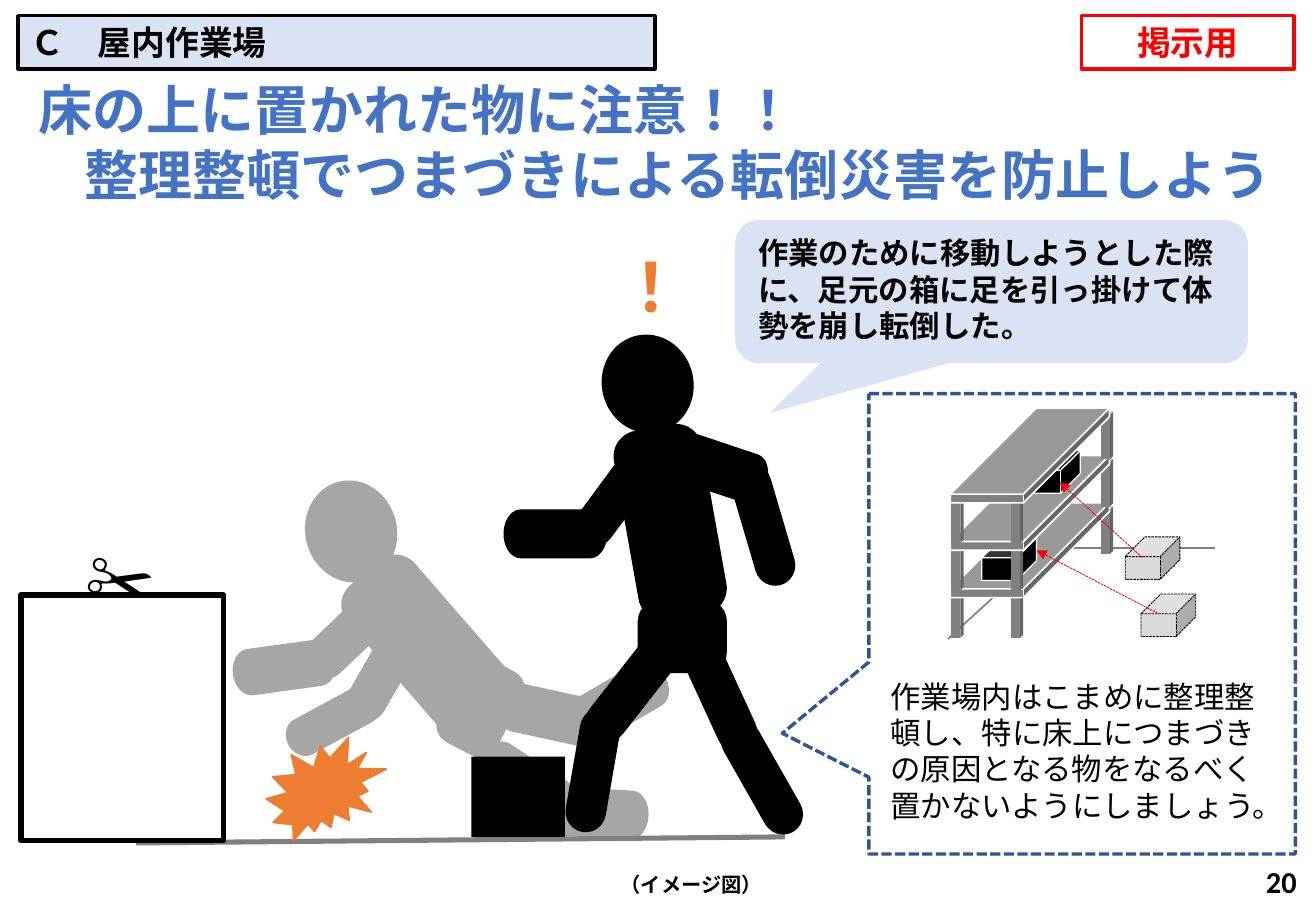
from dataclasses import dataclass

from lxml.etree import SubElement
from pptx import Presentation
from pptx.dml.color import RGBColor
from pptx.enum.dml import MSO_LINE
from pptx.enum.shapes import MSO_CONNECTOR, MSO_SHAPE
from pptx.enum.text import MSO_ANCHOR, MSO_AUTO_SIZE, PP_ALIGN
from pptx.oxml.ns import qn
from pptx.util import Inches, Pt


@dataclass(frozen=True)
class Theme:
    black: str = "000000"
    white: str = "FFFFFF"
    gray: str = "808080"
    ghost: str = "A6A6A6"
    carton: str = "D9D9D9"
    pale: str = "DAE3F3"
    blue: str = "4472C4"
    navy: str = "2F5597"
    red: str = "FF0000"
    orange: str = "ED7D31"
    latin: str = "Calibri"
    japanese: str = "Noto Sans CJK JP"
    headline: int = 32
    mark: int = 40
    label: int = 20
    body: int = 18
    note: int = 12


THEME = Theme()


def assign(target, formats):
    for attribute, value in formats.items():
        setattr(target, attribute, value)


def place(origin, box):
    x, y, width, height = box
    return [Inches(n) for n in (origin[0] + x, origin[1] + y, width, height)]


def style_line(line, color, width, dashed=False):
    line.color.rgb = RGBColor.from_string(color)
    line.width = Pt(width)
    if dashed:
        line.dash_style = MSO_LINE.SQUARE_DOT


def draw(slide, kind, origin, box, fill=None, line=None, adjust=(), rotation=0):
    part = slide.shapes.add_shape(kind, *place(origin, box))
    part.shadow.inherit = False
    part.rotation = rotation
    for index, value in enumerate(adjust):
        part.adjustments[index] = value
    if fill:
        part.fill.solid()
        part.fill.fore_color.rgb = RGBColor.from_string(fill)
    else:
        part.fill.background()
    if line:
        style_line(part.line, *line)
    else:
        part.line.fill.background()
    return part


def connect(slide, origin, ends, line, arrow=False):
    x1, y1, x2, y2 = ends
    points = origin[0] + x1, origin[1] + y1, origin[0] + x2, origin[1] + y2
    link = slide.shapes.add_connector(MSO_CONNECTOR.STRAIGHT, *map(Inches, points))
    style_line(link.line, *line)
    if arrow:
        SubElement(link.line._get_or_add_ln(), qn("a:tailEnd"), type="triangle")
    SubElement(link._element.spPr, qn("a:effectLst"))


def write(holder, text, size, color=THEME.black, bold=True, aligns=(PP_ALIGN.LEFT,),
          anchor=MSO_ANCHOR.TOP, latin=THEME.latin):
    frame = holder.text_frame
    frame.text = text
    assign(frame, {"word_wrap": True, "auto_size": MSO_AUTO_SIZE.NONE,
                   "vertical_anchor": anchor})
    for paragraph, align in zip(frame.paragraphs, aligns):
        paragraph.alignment = align
        for run in paragraph.runs:
            assign(run.font, {"name": latin, "size": Pt(size), "bold": bold})
            run.font.color.rgb = RGBColor.from_string(color)
            properties = run.font._element
            properties.set("lang", "ja-JP")
            SubElement(properties, qn("a:ea"), typeface=THEME.japanese)


def caption(slide, origin, box, text, size, rotation=0, **formats):
    words = slide.shapes.add_textbox(*place(origin, box))
    words.rotation = rotation
    write(words, text, size, **formats)


def heading(slide, origin):
    headline = slide.shapes.title
    assign(headline, dict(zip(("left", "top", "width", "height"),
                              place(origin, (0.07, 0.45, 10.35, 1.18)))))
    write(headline, "床の上に置かれた物に注意！！\n整理整頓でつまづきによる転倒災害を防止しよう",
          THEME.headline, THEME.blue, aligns=(PP_ALIGN.LEFT, PP_ALIGN.RIGHT))
    workplace = draw(slide, MSO_SHAPE.RECTANGLE, origin, (0, 0, 5.24, 0.44),
                     THEME.pale, (THEME.black, 2))
    write(workplace, "Ｃ　屋内作業場", THEME.label, anchor=MSO_ANCHOR.MIDDLE)
    posting = draw(slide, MSO_SHAPE.RECTANGLE, origin, (8.75, 0, 1.75, 0.44),
                   line=(THEME.red, 2))
    write(posting, "掲示用", THEME.label, THEME.red, aligns=(PP_ALIGN.CENTER,),
          anchor=MSO_ANCHOR.MIDDLE)


def accident(slide, origin):
    draw(slide, MSO_SHAPE.ROUNDED_RECTANGULAR_CALLOUT, origin, (0, 0, 4.22, 1.18),
         THEME.pale, adjust=(-0.432, 0.847, 0.167))
    caption(slide, origin, (0.09, 0.07, 4.01, 1.01),
            "作業のために移動しようとした際に、足元の箱に足を引っ掛けて体勢を崩し転倒した。",
            THEME.body)


def worker(slide, origin, color, head, torso, limbs):
    groups = ((MSO_SHAPE.OVAL, (), head), (MSO_SHAPE.ROUNDED_RECTANGLE, (0.287,), torso),
              (MSO_SHAPE.FLOWCHART_TERMINATOR, (), limbs))
    for kind, adjust, members in groups:
        for *box, rotation in members:
            draw(slide, kind, origin, box, color, (color, 1), adjust, rotation)


def fallen_worker(slide, origin):
    worker(slide, origin, THEME.ghost,
           head=[(0.52, 0.96, 0.74, 0.83, 346.4)],
           torso=[(0.73, 1.96, 1.58, 0.72, 229), (1.69, 2.44, 0.53, 0.76, 207.5)],
           limbs=[(2.68, 2.58, 0.84, 0.39, 330.1), (2.49, 3.5, 0.84, 0.39, 183.1),
                  (1.9, 3.25, 0.84, 0.39, 213.2), (2.11, 2.69, 0.84, 0.39, 192.2),
                  (-0.08, 2.31, 0.84, 0.37, 172.2), (0.33, 2.78, 0.82, 0.31, 151.6),
                  (0.46, 2.06, 0.82, 0.34, 316.5), (0.68, 2.31, 1.02, 0.32, 299.9)])


def walking_worker(slide, origin):
    worker(slide, origin, THEME.black,
           head=[(0.96, 0.76, 0.74, 0.8, 346.4)],
           torso=[(0.73, 1.94, 1.57, 0.72, 259.9), (1.32, 2.88, 0.59, 0.72, 270)],
           limbs=[(1.77, 2.16, 1.02, 0.32, 253.6), (0.15, 2.2, 0.84, 0.39, 180),
                  (0.59, 1.89, 1.02, 0.32, 126.4), (1.76, 4.24, 1.02, 0.32, 240.4),
                  (1.41, 3.55, 1.02, 0.32, 245.3), (0.7, 3.51, 0.99, 0.33, 128),
                  (1.5, 1.65, 0.82, 0.4, 198.5), (0.37, 4.18, 1.02, 0.32, 279.8)])
    caption(slide, origin, (0.64, -0.03, 1.44, 0.77), "！", THEME.mark, color=THEME.orange,
            aligns=(PP_ALIGN.CENTER,), latin=THEME.japanese)


def floor_objects(slide, origin):
    draw(slide, MSO_SHAPE.RECTANGLE, origin, (0.17, 0.9, 1.67, 2.02), THEME.white,
         (THEME.black, 3.5))
    draw(slide, MSO_SHAPE.RECTANGLE, origin, (3.88, 2.23, 0.77, 0.66), THEME.black)
    draw(slide, MSO_SHAPE.EXPLOSION2, origin, (2.19, 2.07, 0.99, 0.85), THEME.orange,
         (THEME.orange, 1))
    caption(slide, origin, (0.04, 0.37, 1.92, 0.77), "✂", THEME.mark, rotation=12.9,
            aligns=(PP_ALIGN.CENTER,))


def storage_rack(slide, origin):
    for ends in ((0.78, 1.16, 2.19, 1.16), (-0.01, 1.91, 0.8, 1.17), (0.79, 1.14, 0.8, 0.14)):
        connect(slide, origin, ends, (THEME.gray, 1))
    stored = ((0.27, 1.08), (0.63, 0.36), None)
    for level, box in enumerate(stored):
        rise = 0.39 * level
        for x, y in ((0.02, 1.51), (0.51, 1.51), (1.25, 0.82)):
            draw(slide, MSO_SHAPE.CUBE, origin, (x, y - rise, 0.1, 0.39), THEME.gray)
        draw(slide, MSO_SHAPE.CUBE, origin, (0.01, 0.79 - rise, 1.31, 0.78),
             THEME.gray, (THEME.white, 1), (0.908,))
        if box:
            draw(slide, MSO_SHAPE.CUBE, origin, (*box, 0.45, 0.35), THEME.black,
                 (THEME.white, 0.75), (0.464,))
    for x, y in ((1.45, 1.07), (1.58, 1.54)):
        draw(slide, MSO_SHAPE.CUBE, origin, (x, y, 0.45, 0.35), THEME.carton,
             (THEME.black, 0.5, True), (0.464,))
    for ends in ((1.59, 1.24, 0.91, 0.62), (1.72, 1.7, 0.72, 1.18)):
        connect(slide, origin, ends, (THEME.red, 0.5, True), arrow=True)


def prevention(slide, origin):
    x, y = origin
    storage_rack(slide, (x + 0.66, y + 0.11))
    caption(slide, origin, (0.08, 2.29, 3.35, 1.31),
            "作業場内はこまめに整理整頓し、特に床上につまづきの原因となる物をなるべく置かないようにしましょう。",
            THEME.body, bold=False)
    draw(slide, MSO_SHAPE.RECTANGULAR_CALLOUT, origin, (0, 0, 3.51, 3.79),
         line=(THEME.navy, 2, True), adjust=(-0.703, 0.238))


def footer(slide, origin):
    caption(slide, origin, (5.01, 0.13, 1.78, 0.3), "（イメージ図）", THEME.note)
    caption(slide, origin, (8.33, 0.06, 2.44, 0.4), "20", THEME.body,
            aligns=(PP_ALIGN.RIGHT,), anchor=MSO_ANCHOR.MIDDLE)


def main():
    deck = Presentation()
    assign(deck, {"slide_width": Inches(10.83), "slide_height": Inches(7.5)})
    slide = deck.slides.add_slide(deck.slide_layouts[5])
    heading(slide, (0.15, 0.13))
    accident(slide, (6.05, 1.81))
    fallen_worker(slide, (2, 3))
    connect(slide, (0, 0), (1.12, 6.94, 6.46, 6.89), (THEME.gray, 3))
    walking_worker(slide, (4, 2))
    floor_objects(slide, (0, 4))
    prevention(slide, (7.15, 3.24))
    footer(slide, (0, 7))
    deck.save("out.pptx")


if __name__ == "__main__":
    main()
